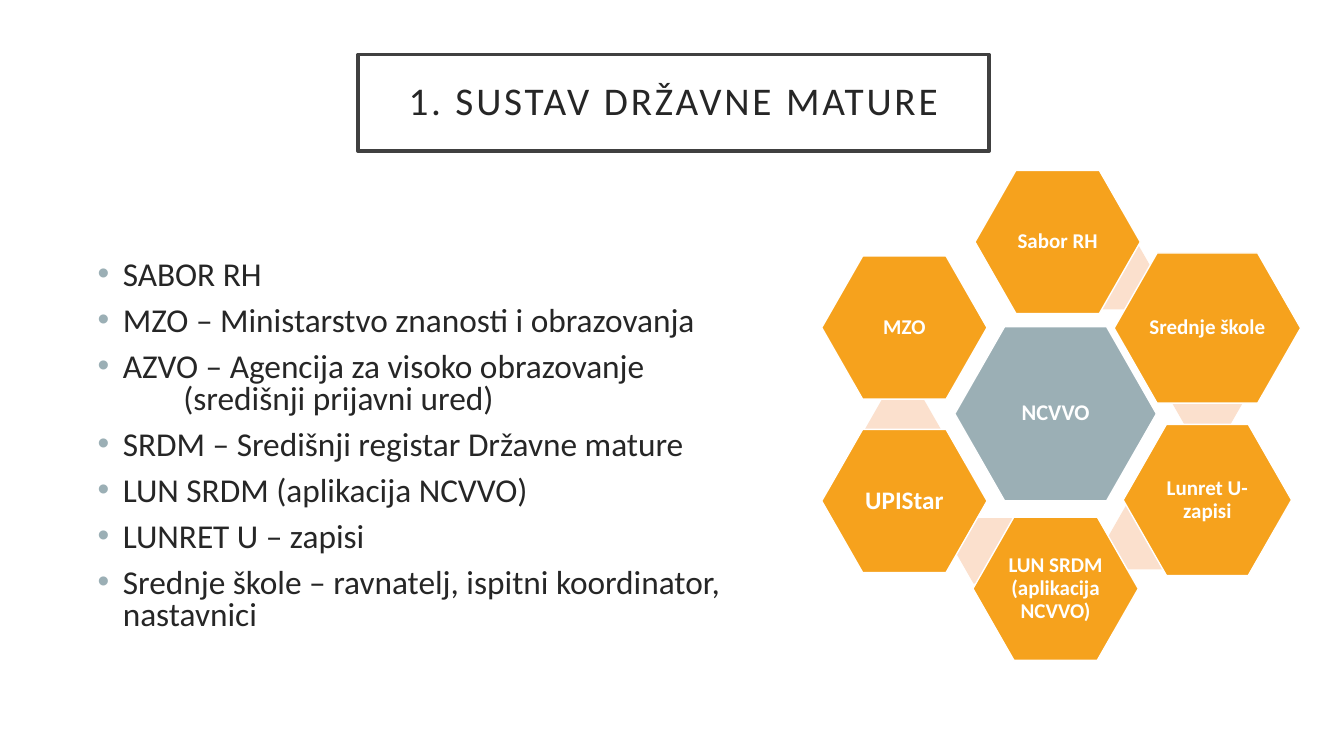
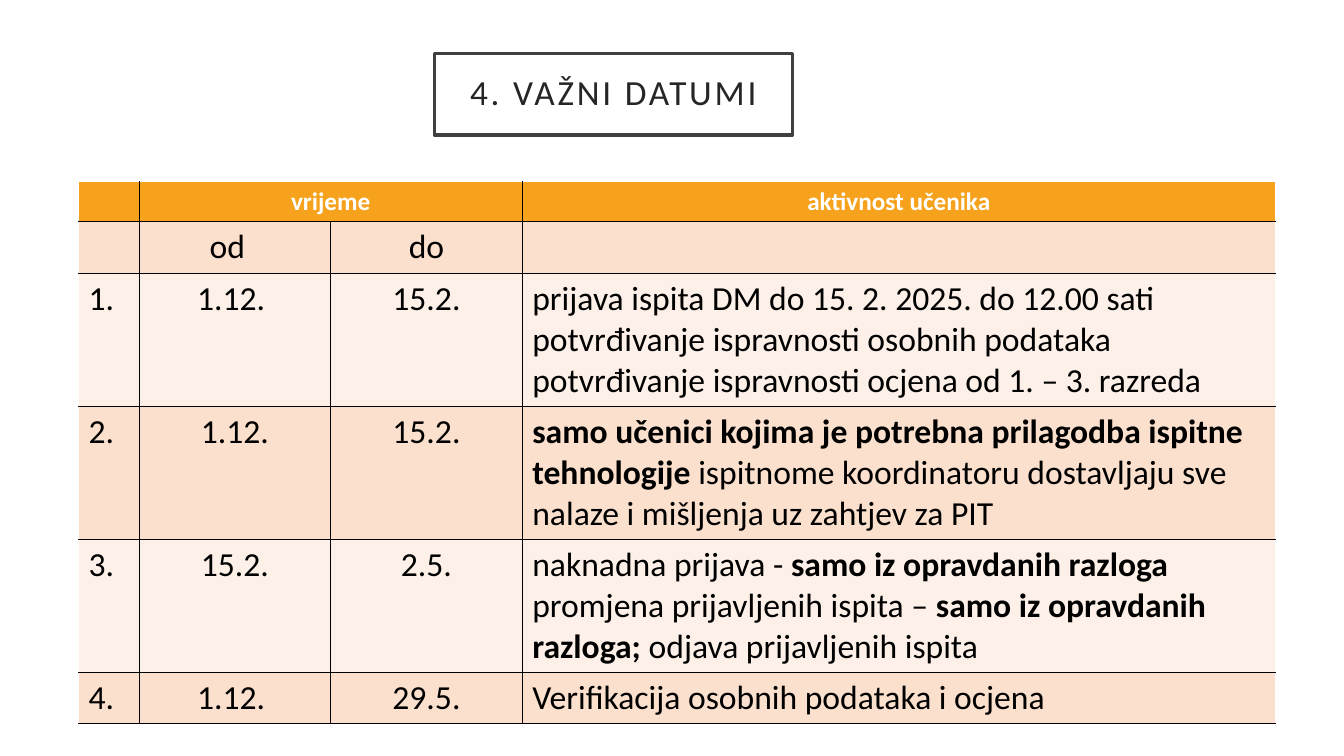
import pptx
import pptx.dml.color
import pptx.enum.shapes
import pptx.enum.text
import pptx.oxml
import pptx.oxml.ns
import pptx.util
from lxml import etree

Inches = pptx.util.Inches
Pt = pptx.util.Pt
ALIGN = pptx.enum.text.PP_ALIGN
ANCHOR = pptx.enum.text.MSO_ANCHOR
SHAPE = pptx.enum.shapes.MSO_SHAPE
qn = pptx.oxml.ns.qn

FONT = "Calibri"
COLORS = {
    "white": "FFFFFF", "black": "000000", "text": "262626", "frame": "404040",
    "grey": "9BAFB5", "orange": "F6A21D", "peach": "FBE0CD", "cream": "FDF0E8",
}

SYSTEM_TITLE = ("1. SUSTAV DRŽAVNE MATURE", (3.55, 0.54, 6.26, 0.96), 28)
DATES_TITLE = ("4. VAŽNI DATUMI", (4.31, 0.53, 3.55, 0.81), 25.2)

# (text, continues the bullet above)
INSTITUTIONS = [
    ("SABOR RH", False),
    ("MZO – Ministarstvo znanosti i obrazovanja", False),
    ("AZVO – Agencija za visoko obrazovanje", False),
    ("(središnji prijavni ured)", True),
    ("SRDM – Središnji registar Državne mature", False),
    ("LUN SRDM (aplikacija NCVVO)", False),
    ("LUNRET U – zapisi", False),
    ("Srednje škole – ravnatelj, ispitni koordinator, nastavnici", False),
]

CENTER = ("NCVVO", (9.47, 3.24, 2, 1.73), 16)
RING_SIZE = (1.64, 1.42)
RING = [
    ("Sabor RH", (9.67, 1.69, *RING_SIZE), 15),
    ("Srednje škole", (11.05, 2.51, 1.85, 1.49), 15),
    ("Lunret U- zapisi", (11.14, 4.21, 1.67, 1.5), 15),
    ("LUN SRDM (aplikacija NCVVO)", (9.65, 5.13, *RING_SIZE), 15),
    ("UPIStar", (8.15, 4.26, *RING_SIZE), 18),
    ("MZO", (8.15, 2.54, *RING_SIZE), 15),
]
LINK_SIZE = (0.75, 0.65)
LINKS = [(10.72, 2.42), (11.6, 3.63), (10.99, 5), (9.47, 5.14), (8.58, 3.93)]

TABLE_AT = (0.78, 1.8)
COLUMN_WIDTHS = [0.6, 1.9, 1.9, 7.47]
ROW_HEIGHTS = [0.4, 0.51, 1.32, 1.32, 1.32, 0.51]
ROW_FILLS = ["orange", "peach", "cream", "peach", "cream", "peach"]
COLUMN_ALIGN = [ALIGN.LEFT, ALIGN.CENTER, ALIGN.CENTER, ALIGN.LEFT]
# A cell is a list of paragraphs, a paragraph a list of (text, bold) runs
DATES = [
    [[], [[("vrijeme", True)]], [], [[("aktivnost učenika", True)]]],
    [[], [[("od", False)]], [[("do", False)]], []],
    [[[("1.", False)]], [[("1.12. ", False)]], [[("15.2.", False)]], [
        [("prijava ispita DM do 15. 2. 2025. do 12.00 sati", False)],
        [("potvrđivanje ispravnosti osobnih podataka", False)],
        [("potvrđivanje ispravnosti ocjena od 1. – 3. razreda", False)]]],
    [[[("2.", False)]], [[("1.12.", False)]], [[("15.2.", False)]], [
        [("samo učenici kojima je potrebna prilagodba ispitne tehnologije ", True),
         ("ispitnome koordinatoru dostavljaju sve nalaze i mišljenja uz zahtjev za PIT", False)]]],
    [[[("3.", False)]], [[("15.2.", False)]], [[("2.5.", False)]], [
        [("naknadna prijava - ", False), ("samo iz opravdanih razloga", True)],
        [("promjena prijavljenih ispita – ", False),
         ("samo iz opravdanih razloga; ", True),
         ("odjava prijavljenih ispita", False)]]],
    [[[("4.", False)]], [[("1.12. ", False)]], [[("29.5.", False)]],
     [[("Verifikacija osobnih podataka i ocjena", False)]]],
]


def rgb(name):
    return pptx.dml.color.RGBColor.from_string(COLORS[name])


def inches(values):
    return [Inches(value) for value in values]


def add_run(paragraph, text, size, color, bold=False):
    run = paragraph.add_run()
    run.text = text
    run.font.name = FONT
    run.font.size = Pt(size)
    run.font.bold = bold
    run.font.color.rgb = rgb(color)
    return run


def set_margins(frame, margin):
    frame.margin_left = frame.margin_right = Inches(margin)
    frame.margin_top = frame.margin_bottom = Inches(margin)


def add_filled_shape(slide, kind, box, fill, line=None, line_width=1):
    shape = slide.shapes.add_shape(kind, *inches(box))
    shape.shadow.inherit = False
    shape.fill.solid()
    shape.fill.fore_color.rgb = rgb(fill)
    if line:
        shape.line.color.rgb = rgb(line)
        shape.line.width = Pt(line_width)
    else:
        shape.line.fill.background()
    return shape


def add_centered_text(shape, text, size, color, margin, bold=False):
    frame = shape.text_frame
    frame.word_wrap = True
    frame.vertical_anchor = ANCHOR.MIDDLE
    set_margins(frame, margin)
    paragraph = frame.paragraphs[0]
    paragraph.alignment = ALIGN.CENTER
    paragraph.line_spacing = 0.9
    return add_run(paragraph, text, size, color, bold)


def add_title(slide, text, box, size):
    shape = add_filled_shape(slide, SHAPE.RECTANGLE, box, "white", "frame", 2.5)
    run = add_centered_text(shape, text, size, "text", 0.2)
    run.font._element.set("spc", "200")


def add_hexagon(slide, box, fill, line=None):
    shape = add_filled_shape(slide, SHAPE.HEXAGON, box, fill, line)
    shape.adjustments[0] = 0.286
    return shape


def add_labelled_hexagon(slide, text, box, size, fill):
    shape = add_hexagon(slide, box, fill, "white")
    add_centered_text(shape, text, size, "white", 0.02, bold=True)


def set_indent(paragraph, left, bullet):
    """Indent a paragraph, with a hanging grey bullet or none."""
    properties = paragraph._p.get_or_add_pPr()
    properties.set("marL", str(Inches(left)))
    properties.set("indent", str(Inches(-0.25 if bullet else 0)))
    if bullet:
        color = etree.SubElement(properties, qn("a:buClr"))
        etree.SubElement(color, qn("a:srgbClr"), val=COLORS["grey"])
        etree.SubElement(properties, qn("a:buFont"), typeface="Arial")
        etree.SubElement(properties, qn("a:buChar"), char="•")
    else:
        etree.SubElement(properties, qn("a:buNone"))


def add_institutions(slide):
    frame = slide.shapes.add_textbox(*inches((0.87, 2.59, 6.7, 3.8))).text_frame
    frame.word_wrap = True
    frame.margin_top = 0
    for index, (text, continues) in enumerate(INSTITUTIONS):
        paragraph = frame.add_paragraph() if index else frame.paragraphs[0]
        paragraph.line_spacing = 0.8
        paragraph.space_before = Pt(0 if continues or index == 0 else 10)
        set_indent(paragraph, 0.85 if continues else 0.25, not continues)
        add_run(paragraph, text, 23.8, "text")


def set_borders(cell, colors):
    """Draw 1 pt borders; colors follow the order left, right, top, bottom."""
    properties = cell._tc.get_or_add_tcPr()
    for side, color in zip("LRTB", colors):
        line = etree.SubElement(properties, qn(f"a:ln{side}"), w=str(Pt(1)))
        fill = etree.SubElement(line, qn("a:solidFill"))
        etree.SubElement(fill, qn("a:srgbClr"), val=COLORS[color])


def fill_cell(cell, paragraphs, size, color, alignment):
    frame = cell.text_frame
    for index, runs in enumerate(paragraphs):
        paragraph = frame.add_paragraph() if index else frame.paragraphs[0]
        paragraph.alignment = alignment
        for text, bold in runs:
            add_run(paragraph, text, size, color, bold)


def add_dates_table(slide):
    size = (sum(COLUMN_WIDTHS), sum(ROW_HEIGHTS))
    table = slide.shapes.add_table(
        len(ROW_HEIGHTS), len(COLUMN_WIDTHS), *inches(TABLE_AT + size)).table
    for column, width in zip(table.columns, COLUMN_WIDTHS):
        column.width = Inches(width)
    for row, height in zip(table.rows, ROW_HEIGHTS):
        row.height = Inches(height)
    last = len(COLUMN_WIDTHS) - 1
    for r, cells in enumerate(DATES):
        header = r == 0
        for c, paragraphs in enumerate(cells):
            cell = table.cell(r, c)
            outer = (c == 0, c == last, header, False)
            set_borders(cell, ["white" if edge else "black" for edge in outer])
            cell.fill.solid()
            cell.fill.fore_color.rgb = rgb(ROW_FILLS[r])
            fill_cell(cell, paragraphs, 18 if header else 24,
                      "white" if header else "black",
                      ALIGN.CENTER if header else COLUMN_ALIGN[c])
    table.cell(0, 1).merge(table.cell(0, 2))
    table.cell(1, 1).margin_right = Inches(0.25)


def main():
    presentation = pptx.Presentation()
    presentation.slide_width = Inches(13.33)
    presentation.slide_height = Inches(7.5)
    blank = presentation.slide_layouts[6]

    system = presentation.slides.add_slide(blank)
    add_title(system, *SYSTEM_TITLE)
    add_institutions(system)
    add_labelled_hexagon(system, *CENTER, "grey")
    for corner in LINKS:
        add_hexagon(system, corner + LINK_SIZE, "peach")
    for member in RING:
        add_labelled_hexagon(system, *member, "orange")

    dates = presentation.slides.add_slide(blank)
    add_title(dates, *DATES_TITLE)
    add_dates_table(dates)

    presentation.save("out.pptx")


if __name__ == "__main__":
    main()
